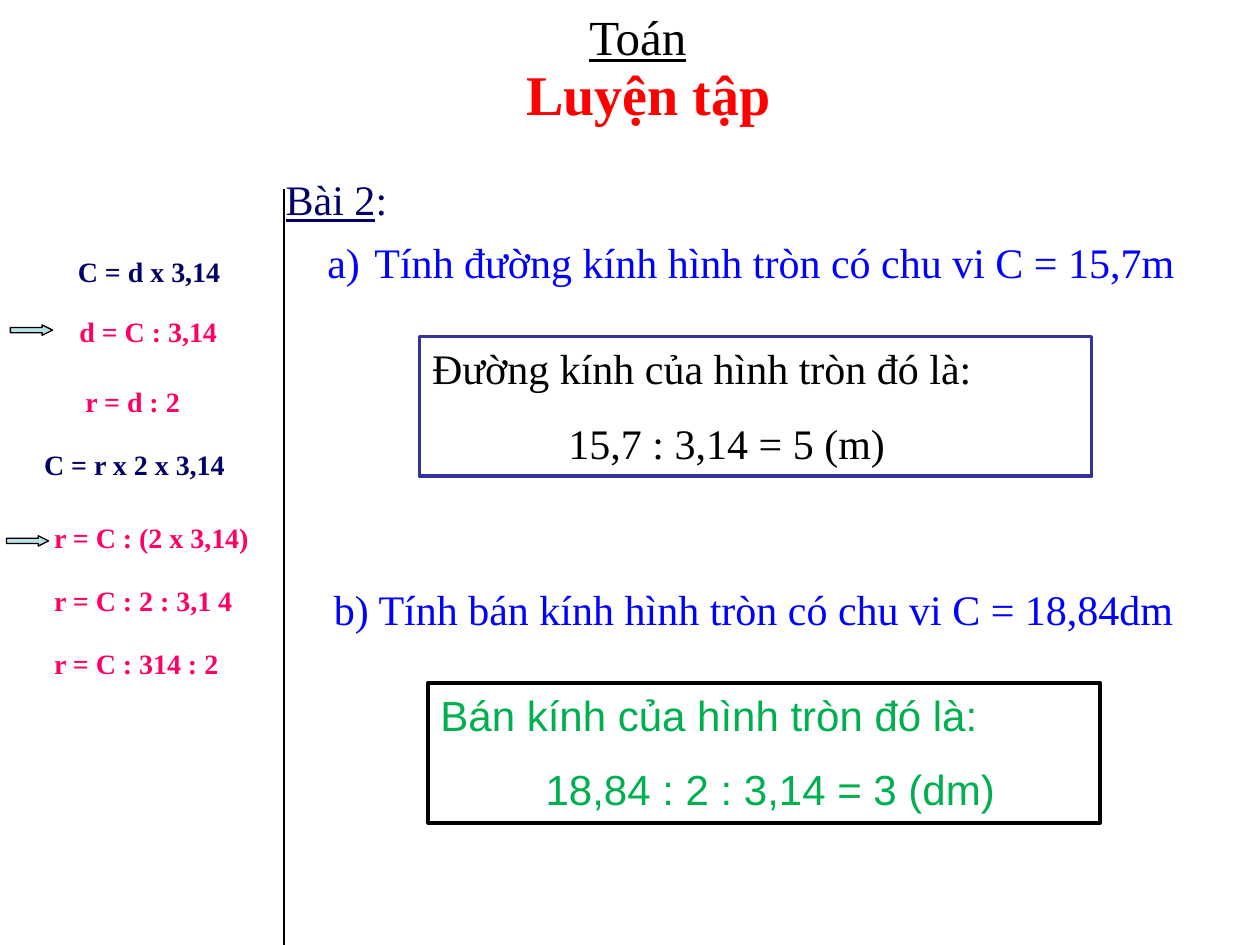
from collections import namedtuple

from lxml.etree import SubElement
from pptx import Presentation
from pptx.dml.color import RGBColor
from pptx.enum.shapes import MSO_CONNECTOR as Connector, MSO_SHAPE as Shape
from pptx.enum.text import MSO_ANCHOR as Anchor, PP_ALIGN as Align
from pptx.oxml.ns import qn
from pptx.util import Cm, Pt

Box = namedtuple("Box", "left top width height")

SERIF = "Times New Roman"
BLACK, NAVY, BLUE, PINK = "000000", "000066", "0000FF", "FF0066"
HEADING = {"name": SERIF, "size": Pt(28), "underline": True}
TITLE = {"name": SERIF, "size": Pt(32), "bold": True}
BODY = {"name": SERIF, "size": Pt(24)}
FORMULA = {"name": SERIF, "size": Pt(16), "bold": True}
SANS_BODY = {"name": "Arial", "size": Pt(24)}


def rgb(value):
    return RGBColor.from_string(value)


def inside(box, left, top, width, height):
    """Lengths in centimetres, measured from the corner of the box."""
    return [Cm(n) for n in (box.left + left, box.top + top, width, height)]


def write(para, text, style, color):
    para.alignment = Align.LEFT
    span = para.add_run()
    span.text = text
    for name, value in style.items():
        setattr(span.font, name, value)
    span.font.color.rgb = rgb(color)
    return span


def add_text(page, area, text, style, color):
    frame = page.shapes.add_textbox(*area).text_frame
    frame.word_wrap = True
    para = frame.paragraphs[0]
    write(para, text, style, color)
    return para


def add_preset(page, kind, area, fill, line, weight):
    shape = page.shapes.add_shape(kind, *area)
    shape.shadow.inherit = False
    shape.fill.solid()
    shape.fill.fore_color.rgb = rgb(fill)
    shape.line.color.rgb = rgb(line)
    shape.line.width = Pt(weight)
    return shape


def add_answer(page, area, lines, indent, style, color, border):
    shape = add_preset(page, Shape.RECTANGLE, area, "FFFFFF", border, 2)
    frame = shape.text_frame
    frame.word_wrap = True
    frame.vertical_anchor = Anchor.TOP
    write(frame.paragraphs[0], lines[0], style, color)
    result = frame.add_paragraph()
    result.space_before = Pt(13.8)
    result._p.get_or_add_pPr().set("marL", str(Cm(indent)))
    write(result, lines[1], style, color)


def add_header(page, box):
    add_text(page, inside(box, 1.27, 0, 2.97, 1.45), "Toán", HEADING, BLACK)
    add_text(page, inside(box, 0, 1.07, box.width, 1.6), "Luyện tập", TITLE, "FF0000")


def add_formulas(page, box):
    # Formulas: left, top, text, colour
    for left, top, text, color in (
        (1.32, 1.19, "C = d x 3,14", NAVY),
        (1.35, 2.41, "d = C : 3,14", PINK),
        (1.47, 3.81, "r = d : 2", PINK),
        (0.64, 5.08, "C = r x 2 x 3,14", NAVY),
        (0.84, 6.55, "r = C : (2 x 3,14)", PINK),
        (0.84, 7.82, "r = C : 2 : 3,1 4", PINK),
        (0.84, 9.09, "r = C : 314 : 2", PINK),
    ):
        add_text(page, inside(box, left, top, 4.65, 0.94), text, FORMULA, color)

    # Arrows before the derived formulas
    for left, top in ((0.21, 2.74), (0.13, 6.99)):
        arrow = add_preset(page, Shape.RIGHT_ARROW, inside(box, left, top, 0.85, 0.21),
                           "BBE0E3", BLACK, 0.75)
        arrow.adjustments[0], arrow.adjustments[1] = 0.5, 1

    # Divider along the right edge
    edge = Cm(box.left + box.width)
    divider = page.shapes.add_connector(
        Connector.STRAIGHT, edge, Cm(box.top), edge, Cm(box.top + box.height))
    divider.line.color.rgb = rgb(BLACK)
    divider.line.width = Pt(1)
    SubElement(divider._element.spPr, qn("a:effectLst"))


def add_exercise(page, box):
    # Heading, with only the number underlined
    para = add_text(page, inside(box, 0, 0, 2.97, 1.27), "Bài 2",
                    {**BODY, "underline": True}, NAVY)
    write(para, ":", BODY, NAVY)

    # Part a, numbered with a hanging indent
    para = add_text(page, inside(box, 0.84, 1.27, 18.62, 1.27),
                    "Tính đường kính hình tròn có chu vi C = 15,7m", BODY, BLUE)
    props = para._p.get_or_add_pPr()
    props.set("marL", str(Cm(0.95)))
    props.set("indent", str(Cm(-0.95)))
    SubElement(props, qn("a:buAutoNum"), type="alphaLcParenR")
    add_answer(page, inside(box, 2.95, 3.4, 13.55, 2.82),
               ("Đường kính của hình tròn đó là:", "15,7 : 3,14 = 5 (m)"),
               2.75, BODY, BLACK, "333399")

    # Part b
    add_text(page, inside(box, 0.97, 8.25, 18.21, 1.27),
             "b) Tính bán kính hình tròn có chu vi C = 18,84dm", BODY, BLUE)
    add_answer(page, inside(box, 3.12, 10.39, 13.55, 2.82),
               ("Bán kính của hình tròn đó là:", "18,84 : 2 : 3,14 = 3 (dm)"),
               2.12, SANS_BODY, "00B050", BLACK)


def main():
    deck = Presentation()
    deck.slide_width, deck.slide_height = Cm(25.4), Cm(19.05)
    page = deck.slides.add_slide(deck.slide_layouts[6])
    add_header(page, Box(10.36, 0, 5.5, 2.67))
    add_formulas(page, Box(0, 3.81, 5.72, 15.24))
    add_exercise(page, Box(5.51, 3.38, 19.46, 13.21))
    deck.save("out.pptx")


if __name__ == "__main__":
    main()
